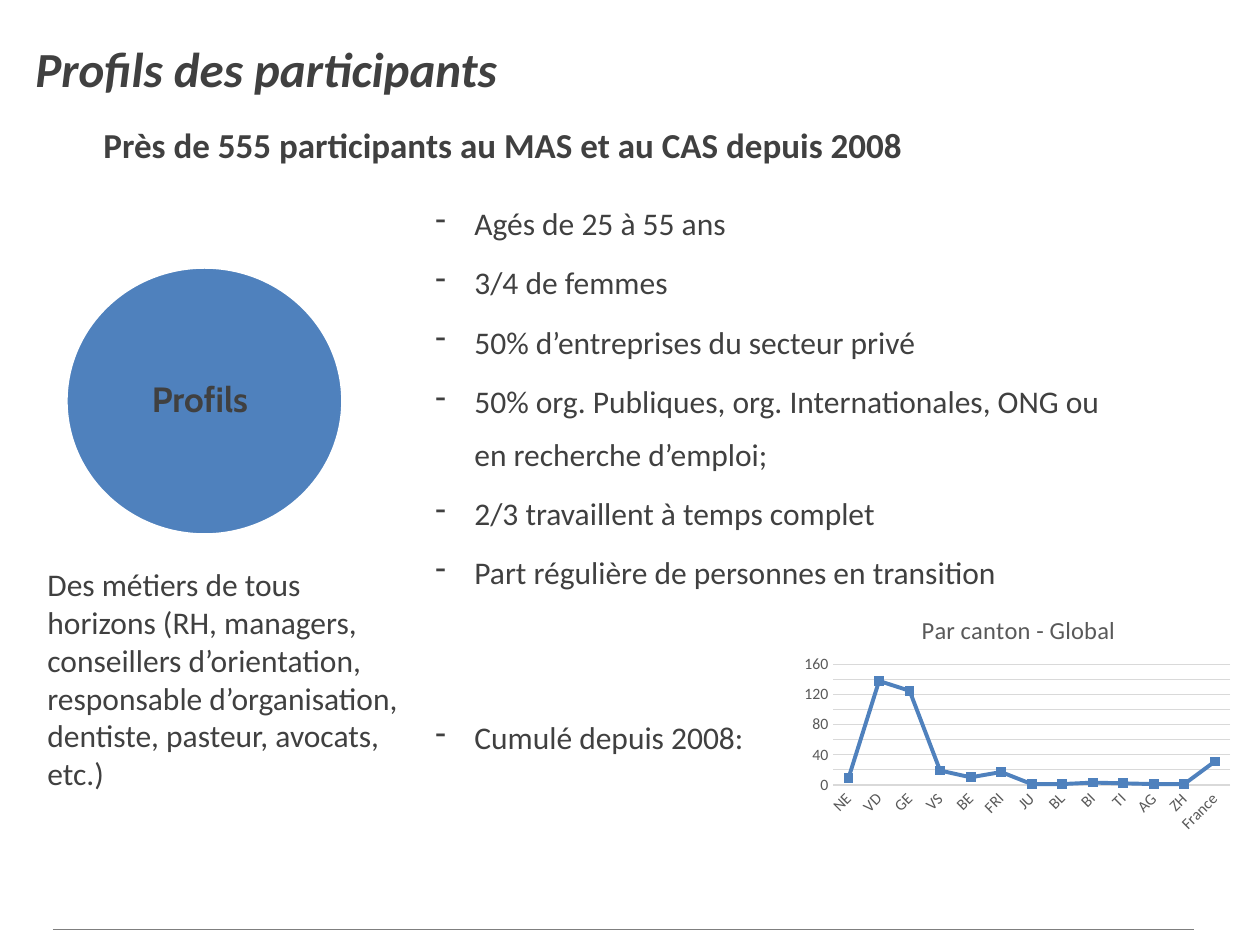
"""Build the participant profile slide with its canton chart."""
from lxml.etree import SubElement, fromstring
from pptx import Presentation
from pptx.chart.data import CategoryChartData
from pptx.dml.color import RGBColor
from pptx.enum.chart import XL_CHART_TYPE as ChartType, XL_TICK_MARK as TickMark
from pptx.enum.shapes import MSO_CONNECTOR as Connector, MSO_SHAPE as Shape
from pptx.enum.text import MSO_ANCHOR as Anchor, PP_ALIGN as Align
from pptx.oxml.ns import nsdecls, qn
from pptx.util import Emu, Pt

SCALE = 914400 / 126
TEXT = RGBColor(0x40, 0x40, 0x40)
BLUE = RGBColor(0x4F, 0x81, 0xBD)
WHITE = RGBColor(0xFF, 0xFF, 0xFF)
RULE = RGBColor(0x7F, 0x7F, 0x7F)
AXIS_TEXT = RGBColor(0x59, 0x59, 0x59)
GRID = RGBColor(0xD9, 0xD9, 0xD9)


def px(*lengths):
    return [Emu(round(length * SCALE)) for length in lengths]


def add_text(box, lines, paragraph_format, font_format):
    shape = slide.shapes.add_textbox(*px(*box))
    frame = shape.text_frame
    frame.word_wrap = True
    for index, line in enumerate(lines):
        paragraph = frame.paragraphs[0] if index == 0 else frame.add_paragraph()
        for name, value in paragraph_format.items():
            setattr(paragraph, name, value)
        run = paragraph.add_run()
        run.text = line
        run.font.color.rgb = TEXT
        for name, value in ({"name": "Calibri"} | font_format).items():
            setattr(run.font, name, value)
    return frame


presentation = Presentation()
presentation.slide_width, presentation.slide_height = px(1260, 945)
slide = presentation.slides.add_slide(presentation.slide_layouts[6])

circle = slide.shapes.add_shape(Shape.OVAL, *px(66, 267, 277, 268))
circle.shadow.inherit = False
circle.fill.solid()
circle.fill.fore_color.rgb = BLUE
circle.line.color.rgb = WHITE
circle.line.width = Pt(2)

label = add_text((86, 306, 228, 190), ["Profils"],
                 {"alignment": Align.CENTER, "line_spacing": 0.9},
                 {"name": "Cabin", "size": Pt(20), "bold": True})
label.vertical_anchor = Anchor.MIDDLE
for side in ("left", "top", "right", "bottom"):
    setattr(label, f"margin_{side}", 0)

add_text((91, 101, 863, 72), ["Près de 555 participants au MAS et au CAS depuis 2008"],
         {"line_spacing": 1.4}, {"size": Pt(20), "bold": True})

facts = ["Agés de 25 à 55 ans", "3/4 de femmes", "50% d’entreprises du secteur privé",
         "50% org. Publiques, org. Internationales, ONG ou en recherche d’emploi;",
         "2/3 travaillent à temps complet", "Part régulière de personnes en transition",
         "Cumulé depuis 2008:"]
fact_list = add_text((423, 183, 699, 593), facts, {"line_spacing": 1.4}, {"size": Pt(18)})
for paragraph in fact_list.paragraphs:
    properties = paragraph._p.get_or_add_pPr()
    indent = px(39)[0]
    properties.set("marL", str(indent))
    properties.set("indent", str(-indent))
    SubElement(properties, qn("a:buChar")).set("char", "-")
for paragraph in fact_list.paragraphs[1:]:
    paragraph.space_before = Pt(3.6)
fact_list.paragraphs[-1].space_before = Pt(64)

add_text((35, 559, 383, 242),
         ["Des métiers de tous horizons (RH, managers, conseillers d’orientation, "
          "responsable d’organisation, dentiste, pasteur, avocats, etc.)"],
         {}, {"size": Pt(18)})

rule = slide.shapes.add_connector(Connector.STRAIGHT, *px(53, 929, 1194, 929))
rule.line.color.rgb = RULE
rule.line.width = Pt(0.25)
SubElement(rule._element.spPr, qn("a:effectLst"))

title = add_text((23, 32, 493, 72), ["Profils des participants"], {},
                 {"size": Pt(28), "bold": True, "italic": True})
title.word_wrap = False

cantons = {"NE": 9, "VD": 138, "GE": 125, "VS": 19, "BE": 10, "FRI": 17, "JU": 1,
           "BL": 1, "BI": 3, "TI": 2, "AG": 1, "ZH": 1, "France": 31}
data = CategoryChartData()
data.categories = list(cantons)
data.add_series("Series 1", list(cantons.values()))
chart = slide.shapes.add_chart(ChartType.LINE, *px(798, 597, 441, 241), data).chart
chart.has_legend = False
chart.font.name = "Calibri"
chart.font.size = Pt(10)
chart.has_title = True
chart.chart_title.include_in_layout = False
chart.chart_title.text_frame.text = "Par canton - Global"
title_font = chart.chart_title.text_frame.paragraphs[0].runs[0].font
for name, value in {"name": "Calibri", "size": Pt(14), "bold": False}.items():
    setattr(title_font, name, value)
title_font.color.rgb = AXIS_TEXT

plot = chart.plots[0]
plot.vary_by_categories = False
series = plot.series[0]
series.smooth = False
series.marker.style = None
series.format.line.color.rgb = BLUE
series.format.line.width = Pt(2.25)

for axis in (chart.category_axis, chart.value_axis):
    axis.major_tick_mark = axis.minor_tick_mark = TickMark.NONE
    axis.tick_labels.font.name = "Calibri"
    axis.tick_labels.font.size = Pt(9)
    axis.tick_labels.font.color.rgb = AXIS_TEXT
chart.category_axis._element.find(qn("c:txPr")).find(qn("a:bodyPr")).set("rot", "-2700000")
chart.value_axis.minimum_scale = 0
chart.value_axis.maximum_scale = 160
chart.value_axis.major_unit = 20
chart.value_axis.format.line.fill.background()
for line in (chart.category_axis.format.line, chart.value_axis.major_gridlines.format.line):
    line.color.rgb = GRID
    line.width = Pt(0.75)

plot_area = chart._chartSpace.chart.plotArea
for layout in plot_area.findall(qn("c:layout")):
    plot_area.remove(layout)
layout = fromstring(f'<c:layout {nsdecls("c")}><c:manualLayout/></c:layout>')
manual = layout[0]
for name, value in {"layoutTarget": "inner", "xMode": "edge", "yMode": "edge",
                    "x": 0.08, "y": 0.28, "w": 0.9, "h": 0.5}.items():
    SubElement(manual, qn(f"c:{name}")).set("val", str(value))
plot_area.insert(0, layout)

presentation.save("out.pptx")
